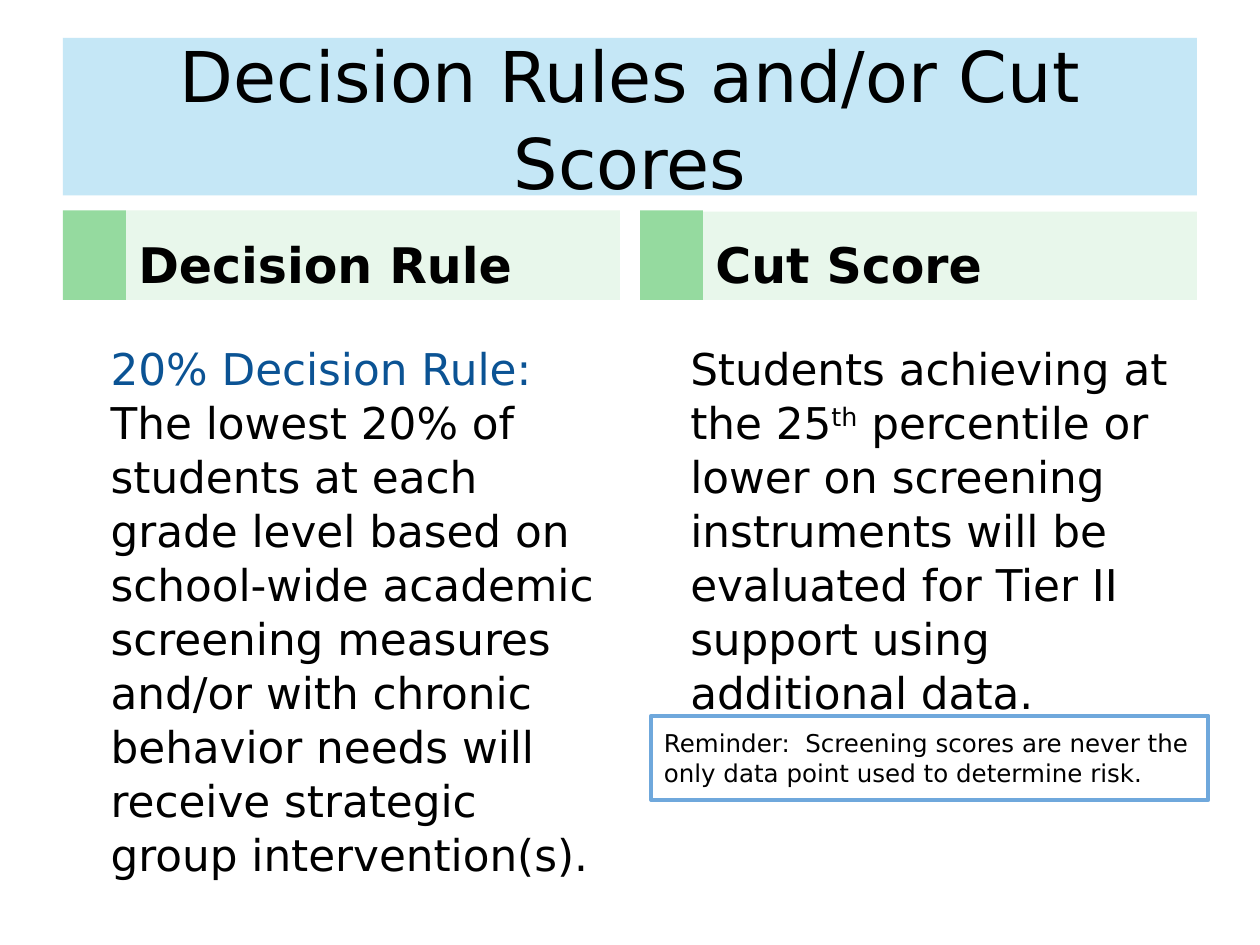
from typing import NamedTuple, Optional

from pptx import Presentation
from pptx.dml.color import RGBColor
from pptx.enum import shapes, text
from pptx.oxml.xmlchemy import OxmlElement
from pptx.util import Inches, Pt

FONT = "DejaVu Sans"
HUES = {
    "black": "000000",
    "blue": "0B5394",
    "sky": "A9DCF2",
    "green": "95DA9F",
    "mint": "E8F7EB",
    "edge": "6FA8DC",
}


class Run(NamedTuple):
    text: str
    hue: str = "black"
    base: int = 0


class Style(NamedTuple):
    size: float
    bold: bool = False
    align: text.PP_ALIGN = text.PP_ALIGN.LEFT
    anchor: text.MSO_ANCHOR = text.MSO_ANCHOR.TOP
    indent: float = 0
    pitch: float = 1
    pad: float = 0.05


class Box(NamedTuple):
    left: float
    top: float
    width: float
    height: float


class Column(NamedTuple):
    tab: Box
    head: Box
    title: str
    body: Box
    runs: list[Run]


TITLE = Style(40, align=text.PP_ALIGN.CENTER, anchor=text.MSO_ANCHOR.MIDDLE, pitch=1.03)
HEAD = Style(28, bold=True, anchor=text.MSO_ANCHOR.BOTTOM)
BODY = Style(25, indent=0.38, pitch=1.03)
NOTE = Style(14, pad=0.1)

COLUMNS = [
    Column(
        Box(0.5, 1.67, 0.5, 0.71),
        Box(1, 1.67, 3.92, 0.71),
        "Decision Rule",
        Box(0.4, 2.65, 4.52, 4.32),
        [
            Run("20% Decision Rule: ", "blue"),
            Run(" The lowest 20% of students at each grade level based on "
                "school-wide academic screening measures and/or with chronic "
                "behavior needs will receive strategic group intervention(s)."),
        ],
    ),
    Column(
        Box(5.08, 1.67, 0.5, 0.71),
        Box(5.58, 1.68, 3.92, 0.7),
        "Cut Score",
        Box(5, 2.65, 4.42, 4.32),
        [
            Run("Students achieving at the 25"),
            Run("th", base=30),
            Run(" percentile or lower on screening instruments will be "
                "evaluated for Tier II support using additional data."),
        ],
    ),
]


def color(hue: str) -> RGBColor:
    return RGBColor.from_string(HUES[hue])


def place(box: Box) -> list[int]:
    return [Inches(side) for side in box]


def write(shape, runs: list[Run], style: Style) -> None:
    frame = shape.text_frame
    frame.word_wrap = True
    frame.vertical_anchor = style.anchor
    frame.margin_left = frame.margin_right = Inches(0.1)
    frame.margin_top = frame.margin_bottom = Inches(style.pad)
    para = frame.paragraphs[0]
    para.alignment = style.align
    para.line_spacing = style.pitch
    if style.indent:
        props = para._p.get_or_add_pPr()
        props.set("marL", str(Inches(style.indent)))
        props.set("indent", "0")
    for part in runs:
        run = para.add_run()
        run.text = part.text
        run.font.name = FONT
        run.font.size = Pt(style.size)
        run.font.bold = style.bold
        run.font.color.rgb = color(part.hue)
        if part.base:
            run._r.get_or_add_rPr().set("baseline", str(part.base * 1000))


def panel(slide, box: Box, fill: Optional[str] = None, edge: Optional[str] = None):
    shape = slide.shapes.add_shape(shapes.MSO_SHAPE.RECTANGLE, *place(box))
    shape.shadow.inherit = False
    if fill:
        shape.fill.solid()
        shape.fill.fore_color.rgb = color(fill)
    else:
        shape.fill.background()
    if edge:
        shape.line.color.rgb = color(edge)
        shape.line.width = Pt(2.25)
    else:
        shape.line.fill.background()
    return shape


def fade(shape, percent: int) -> None:
    """Set the opacity of a solid fill."""
    alpha = OxmlElement("a:alpha")
    alpha.set("val", str(percent * 1000))
    shape.fill._xPr.solidFill[0].append(alpha)


def main() -> None:
    deck = Presentation()
    deck.slide_width, deck.slide_height = Inches(10), Inches(7.5)
    slide = deck.slides.add_slide(deck.slide_layouts[6])

    banner = panel(slide, Box(0.5, 0.3, 9, 1.25), "sky")
    fade(banner, 67)
    write(banner, [Run("Decision Rules and/or Cut Scores")], TITLE)

    for col in COLUMNS:
        panel(slide, col.tab, "green")
        write(panel(slide, col.head, "mint"), [Run(col.title)], HEAD)
        write(slide.shapes.add_textbox(*place(col.body)), col.runs, BODY)

    note = panel(slide, Box(5.17, 5.68, 4.42, 0.67), edge="edge")
    write(note, [Run("Reminder:  Screening scores are never the only data "
                     "point used to determine risk.")], NOTE)
    note.text_frame.auto_size = text.MSO_AUTO_SIZE.SHAPE_TO_FIT_TEXT

    deck.save("out.pptx")


if __name__ == "__main__":
    main()
